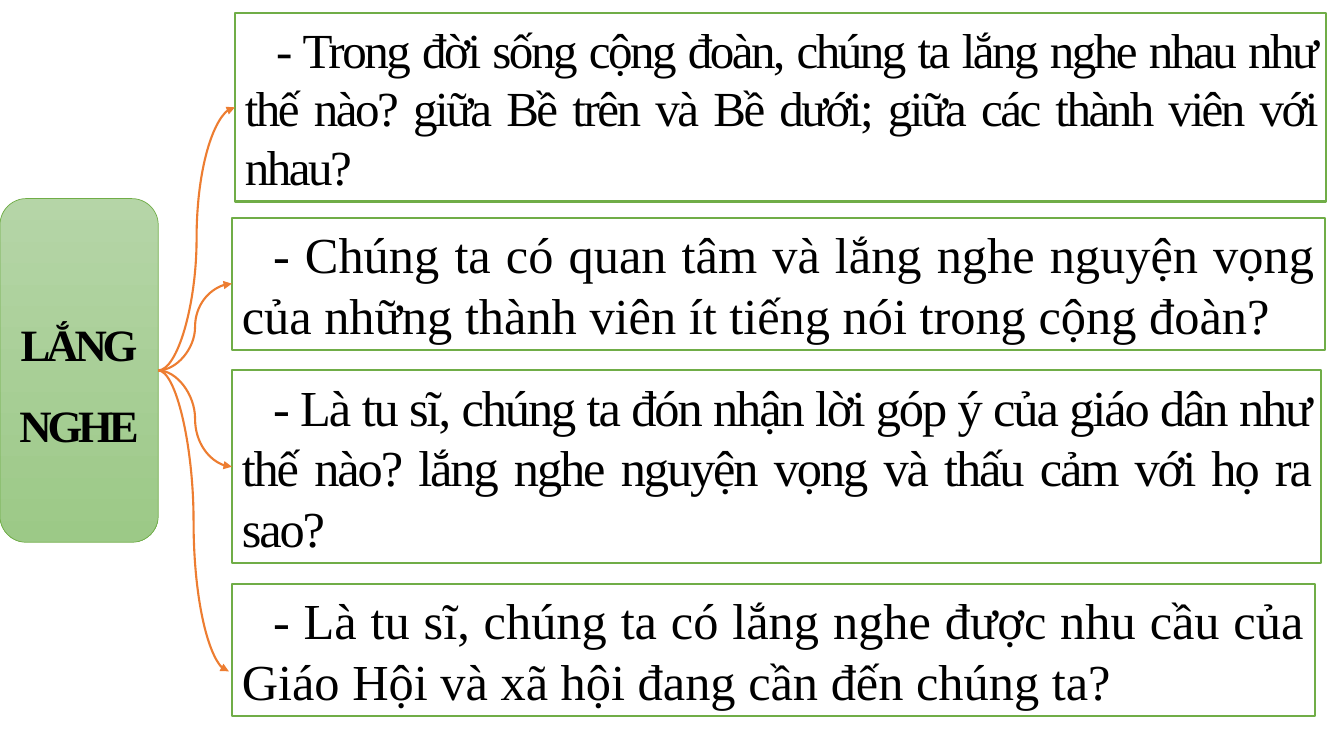
from dataclasses import dataclass

from lxml import etree
from pptx import Presentation
from pptx.dml.color import RGBColor
from pptx.enum import shapes, text
from pptx.oxml import ns
from pptx.util import Inches, Pt


@dataclass(frozen=True)
class Theme:
    font: str = "Times New Roman"
    ink: RGBColor = RGBColor(0, 0, 0)
    paper: RGBColor = RGBColor(255, 255, 255)
    green: RGBColor = RGBColor.from_string("70AD47")
    topic_top: RGBColor = RGBColor.from_string("B5D5A7")
    topic_bottom: RGBColor = RGBColor.from_string("9CC987")
    orange: RGBColor = RGBColor.from_string("ED7D31")
    topic_size: int = 32
    line: float = 1.5
    thin_line: float = 0.5
    indent: float = 0.31


THEME = Theme()

# Box (left, top, width, height), type size, letter spacing in points, wording
QUESTIONS = [
    ((2.33, 0.13, 10.82, 1.87), 35, -1.8,
     "- Trong đời sống cộng đoàn, chúng ta lắng nghe nhau như thế nào? "
     "giữa Bề trên và Bề dưới; giữa các thành viên với nhau?"),
    ((2.3, 2.16, 10.84, 1.31), 36, 0,
     "- Chúng ta có quan tâm và lắng nghe nguyện vọng của những thành viên "
     "ít tiếng nói trong cộng đoàn?"),
    ((2.3, 3.67, 10.8, 1.92), 36, -1.5,
     "- Là tu sĩ, chúng ta đón nhận lời góp ý của giáo dân như thế nào? "
     "lắng nghe nguyện vọng và thấu cảm với họ ra sao?"),
    ((2.3, 5.79, 10.74, 1.31), 36, 0,
     "- Là tu sĩ, chúng ta có lắng nghe được nhu cầu của Giáo Hội và xã hội "
     "đang cần đến chúng ta?"),
]
TOPIC_BOX = (0, 1.97, 1.57, 3.41)
LOOSE_END = (2.27, 6.66)  # the last arrow stops just short of its box


def add_panel(page, kind, box, line_width):
    panel = page.shapes.add_shape(kind, *map(Inches, box))
    panel.shadow.inherit = False
    panel.line.color.rgb = THEME.green
    panel.line.width = Pt(line_width)
    panel.text_frame.word_wrap = True
    return panel


def write(para, wording, size, spacing, align, bold=False):
    """Fill a paragraph; spacing is the letter spacing in points."""
    span = para.add_run()
    span.text = wording
    if spacing:
        span.font._element.set("spc", str(round(spacing * 100)))
    para.alignment = align
    font = para.font
    font.name, font.size, font.bold = THEME.font, Pt(size), bold
    font.color.rgb = THEME.ink


def add_question(page, box, size, spacing, wording):
    panel = add_panel(page, shapes.MSO_SHAPE.RECTANGLE, box, THEME.line)
    panel.fill.solid()
    panel.fill.fore_color.rgb = THEME.paper
    panel.text_frame.auto_size = text.MSO_AUTO_SIZE.SHAPE_TO_FIT_TEXT
    para = panel.text_frame.paragraphs[0]
    para._p.get_or_add_pPr().set("indent", str(Inches(THEME.indent)))
    write(para, wording, size, spacing, text.PP_ALIGN.JUSTIFY)
    return panel


def add_topic(page, box, words):
    panel = add_panel(page, shapes.MSO_SHAPE.ROUNDED_RECTANGLE, box, THEME.thin_line)
    panel.fill.gradient()
    panel.fill.gradient_angle = 270
    for stop, color in zip(panel.fill.gradient_stops,
                           (THEME.topic_top, THEME.topic_bottom)):
        stop.color.rgb = color
    frame = panel.text_frame
    frame.vertical_anchor = text.MSO_ANCHOR.MIDDLE
    for index, word in enumerate(words):
        para = frame.add_paragraph() if index else frame.paragraphs[0]
        para.line_spacing = 1.5
        write(para, word, THEME.topic_size, -3, text.PP_ALIGN.CENTER, bold=True)
    return panel


def add_arrow(page, topic, question, loose_end=None):
    """Curve from the topic to a question, or to a free point."""
    end = map(Inches, loose_end or (0, 0))
    arrow = page.shapes.add_connector(
        shapes.MSO_CONNECTOR.CURVE, topic.left + topic.width,
        topic.top + topic.height // 2, *end)
    arrow.begin_connect(topic, 3)
    if not loose_end:
        arrow.end_connect(question, 1)
    arrow.line.color.rgb = THEME.orange
    arrow.line.width = Pt(THEME.line)
    etree.SubElement(arrow.line._get_or_add_ln(), ns.qn("a:tailEnd"), type="triangle")
    etree.SubElement(arrow._element.spPr, ns.qn("a:effectLst"))


def build_mind_map(page):
    questions = [add_question(page, *question) for question in QUESTIONS]
    topic = add_topic(page, TOPIC_BOX, ("LẮNG", "NGHE"))
    for question in questions[:-1]:
        add_arrow(page, topic, question)
    add_arrow(page, topic, questions[-1], LOOSE_END)


def main():
    deck = Presentation()
    deck.slide_width, deck.slide_height = Inches(13.33), Inches(7.5)
    build_mind_map(deck.slides.add_slide(deck.slide_layouts[6]))
    deck.save("out.pptx")


if __name__ == "__main__":
    main()
